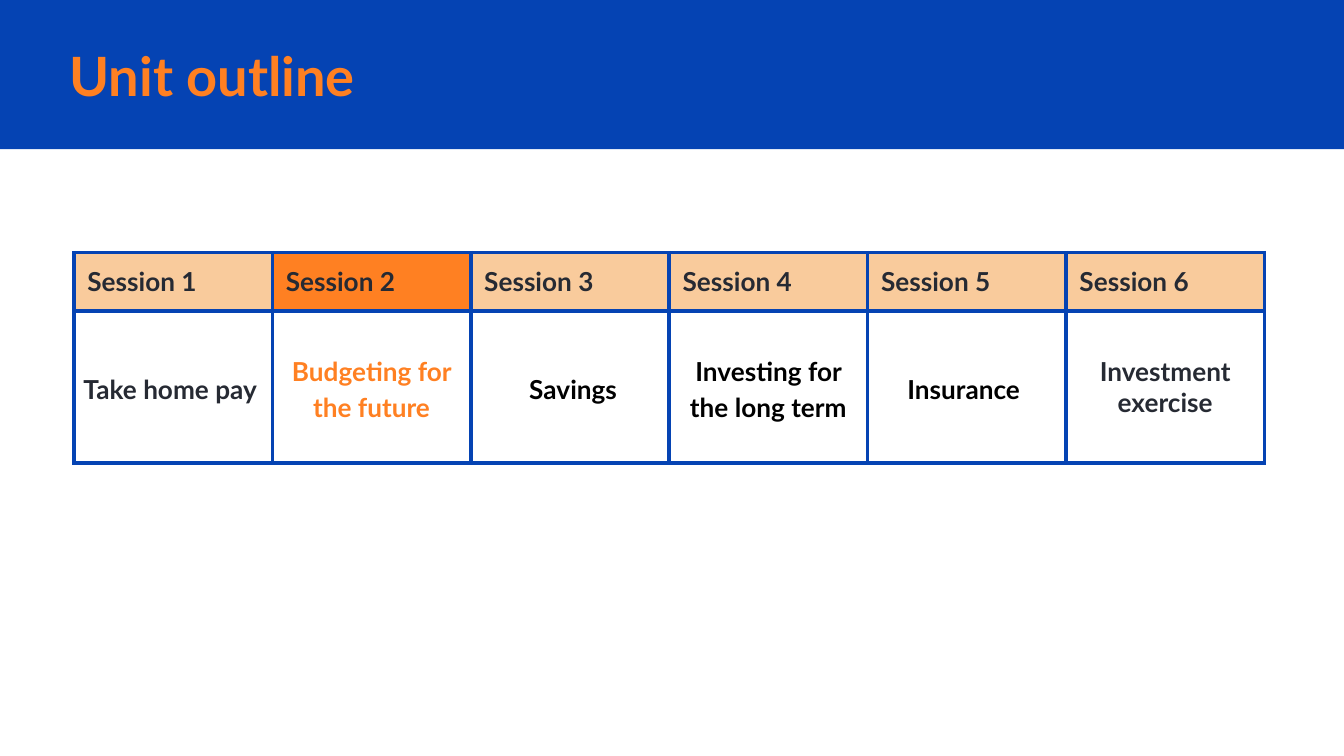
from lxml import etree
from pptx import Presentation
from pptx import util as u
from pptx.dml import color
from pptx.enum import shapes, text
from pptx.oxml import ns

BLUE, ORANGE, PEACH = "0543B3", "FF8022", "F9CB9C"
DARK, BLACK, WHITE = "262A33", "000000", "FFFFFF"


def rgb(value):
    return color.RGBColor.from_string(value)


def write(tf, content, size=14, ink=DARK, font="Lato", align=text.PP_ALIGN.LEFT,
          spacing=1.0):
    p = tf.paragraphs[0]
    p.alignment = align
    p.line_spacing = spacing
    r = p.add_run()
    r.text = content
    r.font.name = font
    r.font.size = u.Pt(size)
    r.font.bold = True
    r.font.color.rgb = rgb(ink)


class Deck:
    def __init__(self, width):
        self.prs = Presentation()
        self.prs.slide_width = u.Inches(width)
        self.prs.slide_height = u.Inches(width * 9 / 16)
        self.s = self.prs.slides.add_slide(self.prs.slide_layouts[6])

    def band(self, x, y, w, h, fill):
        sp = self.s.shapes.add_shape(shapes.MSO_SHAPE.RECTANGLE, *map(u.Inches, (x, y, w, h)))
        sp.shadow.inherit = False
        sp.fill.solid()
        sp.fill.fore_color.rgb = rgb(fill)
        sp.line.fill.background()

    def label(self, x, y, w, h, content, **style):
        tf = self.s.shapes.add_textbox(*map(u.Inches, (x, y, w, h))).text_frame
        tf.margin_left = tf.margin_right = tf.margin_top = tf.margin_bottom = u.Inches(0.1)
        tf.word_wrap = True
        tf.vertical_anchor = text.MSO_ANCHOR.MIDDLE
        write(tf, content, **style)

    def table(self, x, y, width, row_heights, cols):
        frame = self.s.shapes.add_table(
            len(row_heights), cols, u.Inches(x), u.Inches(y),
            u.Inches(width), u.Inches(sum(row_heights)))
        table = frame.table
        for row, height in zip(table.rows, row_heights):
            row.height = u.Inches(height)
        return table

    def cell(self, cell, content, fill, margin=0.1, anchor=text.MSO_ANCHOR.TOP, **style):
        tcPr = cell._tc.get_or_add_tcPr()
        for side in ("lnL", "lnR", "lnT", "lnB"):
            ln = etree.SubElement(tcPr, ns.qn(f"a:{side}"), w=str(u.Pt(2.25)))
            solid = etree.SubElement(ln, ns.qn("a:solidFill"))
            etree.SubElement(solid, ns.qn("a:srgbClr"), val=BLUE)
        cell.fill.solid()
        cell.fill.fore_color.rgb = rgb(fill)
        cell.margin_left = cell.margin_right = u.Inches(margin)
        cell.margin_top = cell.margin_bottom = u.Inches(margin)
        cell.vertical_anchor = anchor
        write(cell.text_frame, content, **style)


def main():
    deck = Deck(10)
    deck.band(0, 0, 10, 1.11, BLUE)
    deck.label(0.42, 0.28, 8.46, 0.56, "Unit outline", size=29, ink=ORANGE)

    sessions = [
        ("Take home pay ", PEACH, DARK, 0.07, 1.15),
        ("Budgeting for the future", ORANGE, ORANGE, 0.07, 1.15),
        (" Savings", PEACH, BLACK, 0.07, 1.15),
        ("Investing for the long term", PEACH, BLACK, 0.07, 1.15),
        ("Insurance ", PEACH, BLACK, 0.07, 1.15),
        ("Investment exercise", PEACH, DARK, 0.1, 1.0),
    ]
    table = deck.table(0.55, 1.88, 8.86, (0.43, 1.13), len(sessions))
    for i, (topic, fill, ink, margin, spacing) in enumerate(sessions):
        deck.cell(table.cell(0, i), f"Session {i + 1}", fill)
        deck.cell(table.cell(1, i), topic, WHITE, margin, text.MSO_ANCHOR.MIDDLE,
                  ink=ink, align=text.PP_ALIGN.CENTER, spacing=spacing)
    deck.prs.save("out.pptx")


if __name__ == "__main__":
    main()
